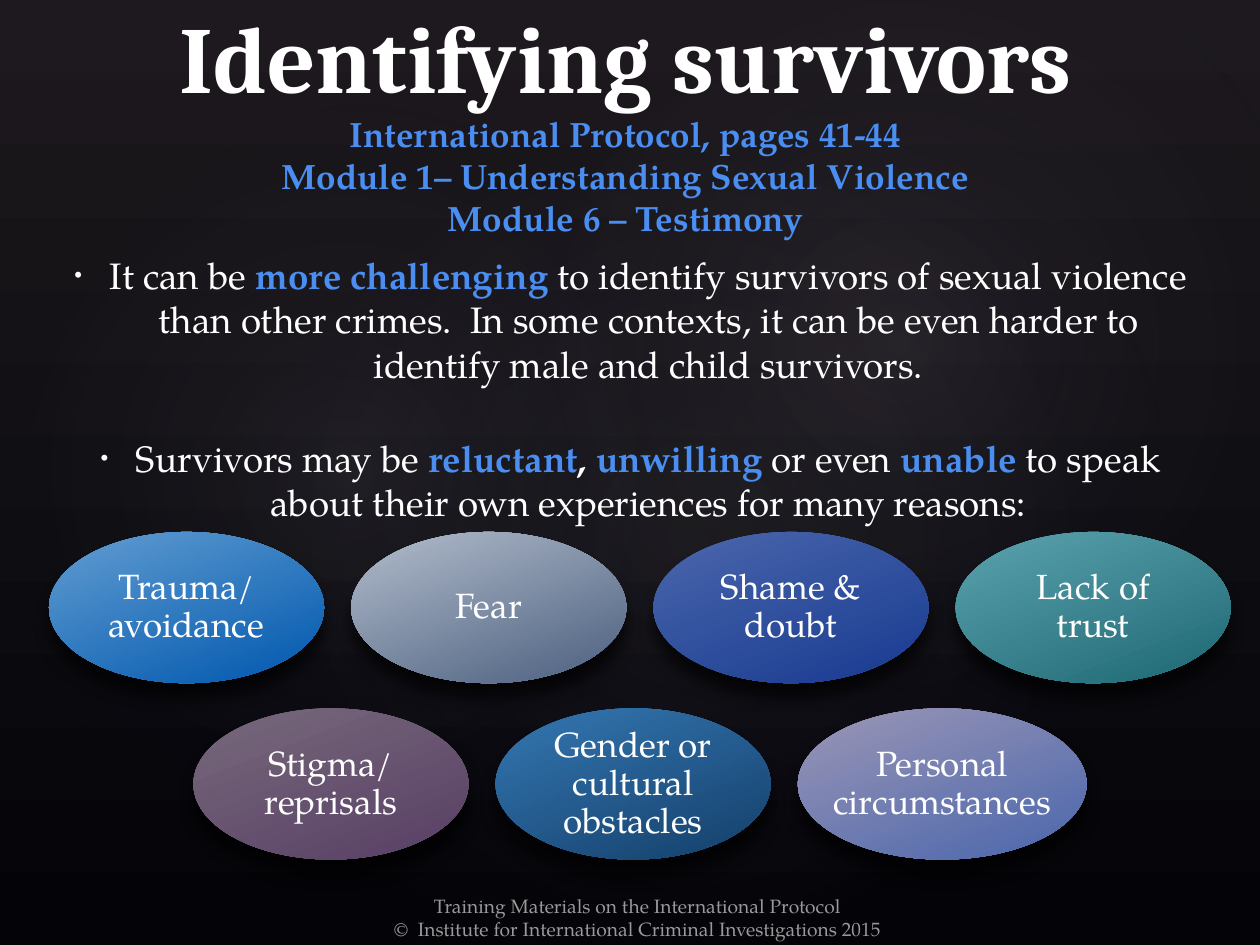
"""Build the slide on identifying survivors, with reasons for reluctance shown as ovals."""
from pptx import Presentation
from pptx.dml.color import RGBColor
from pptx.enum.shapes import MSO_SHAPE
from pptx.enum.text import MSO_ANCHOR, MSO_AUTO_SIZE, PP_ALIGN
from pptx.oxml import parse_xml
from pptx.oxml.ns import nsdecls, qn
from pptx.util import Pt

OVAL = MSO_SHAPE.OVAL
CENTER = PP_ALIGN.CENTER
MIDDLE, BOTTOM = MSO_ANCHOR.MIDDLE, MSO_ANCHOR.BOTTOM
NO_AUTOFIT = MSO_AUTO_SIZE.NONE
HEADING_FONT, TEXT_FONT = "Cambria", "TeX Gyre Pagella"
COLORS = {
    "text": "FFFFFF", "accent": "4A8EF2", "footer": "999999",
    "backdrop top": "1D191E", "backdrop bottom": "040408",
    "glow": "C4BCC6", "glow edge": "242852",
    "trauma": "629DD1", "trauma end": "0057AE",
    "fear": "B2BCCB", "fear end": "4B5F7F",
    "shame": "4A66AC", "shame end": "183A90",
    "trust": "5AA2AE", "trust end": "1E6874",
    "stigma": "78697B", "stigma end": "573F65",
    "gender": "3477B2", "gender end": "143F6A",
    "personal": "9B96B6", "personal end": "4A66AC",
}


def write(paragraph, text, size=20, font=TEXT_FONT, color="text", bold=False):
    paragraph.alignment = CENTER
    for number, line in enumerate(text.split("\n")):
        if number:
            paragraph.add_line_break()
        run = paragraph.add_run()
        run.text = line
        run.font.size = Pt(size)
        run.font.name = font
        run.font.bold = bold
        run.font.color.rgb = RGBColor.from_string(COLORS[color])


def fade(fill, start, end, angle):
    fill.gradient()
    fill.gradient_angle = angle
    for stop, color in zip(fill.gradient_stops, (start, end)):
        stop.color.rgb = RGBColor.from_string(COLORS[color])


deck = Presentation()
deck.slide_width, deck.slide_height = Pt(720), Pt(540)
slide = deck.slides.add_slide(deck.slide_layouts[1])
shapes = slide.shapes
fade(slide.background.fill, "backdrop top", "backdrop bottom", 270)

GLOWS = [
    (108, 82, 570, 449, 328.7, 7),
    (-21.6, 92, 436, 353, 294.3, 8),
    (257.8, 9.4, 510.5, 374.4, 328.7, 8),
]
for depth, (left, top, width, height, turn, opacity) in enumerate(GLOWS):
    glow = shapes.add_shape(OVAL, Pt(left), Pt(top), Pt(width), Pt(height))
    glow.rotation = turn
    glow.shadow.inherit = False
    glow.line.fill.background()
    glow.fill.background()
    properties = glow._element.spPr
    properties.replace(properties.find(qn("a:noFill")), parse_xml(
        f'<a:gradFill {nsdecls("a")}><a:gsLst>'
        f'<a:gs pos="0"><a:srgbClr val="{COLORS["glow"]}"><a:alpha val="{opacity * 1000}"/></a:srgbClr></a:gs>'
        f'<a:gs pos="58000"><a:srgbClr val="{COLORS["glow edge"]}"><a:alpha val="0"/></a:srgbClr></a:gs>'
        f'<a:gs pos="100000"><a:srgbClr val="{COLORS["glow edge"]}"><a:alpha val="0"/></a:srgbClr></a:gs>'
        '</a:gsLst><a:path path="circle"><a:fillToRect l="50000" t="50000" r="50000" b="50000"/></a:path>'
        '</a:gradFill>'))
    shapes._spTree.insert(2 + depth, glow._element)

heading = shapes.title
heading.left, heading.top, heading.width, heading.height = Pt(37), Pt(9.4), Pt(641), Pt(130.3)
heading_frame = heading.text_frame
heading_frame.auto_size = NO_AUTOFIT
heading_frame.vertical_anchor = BOTTOM
write(heading_frame.paragraphs[0], "Identifying survivors", size=54, font=HEADING_FONT, bold=True)
for reference in ("International Protocol, pages 41-44",
                  "Module 1– Understanding Sexual Violence",
                  "Module 6 – Testimony"):
    write(heading_frame.add_paragraph(), reference, color="accent", bold=True)

points = slide.placeholders[1]
points.left, points.top, points.width, points.height = Pt(25.2), Pt(145.4), Pt(669), Pt(153.4)
points_frame = points.text_frame
points_frame.auto_size = NO_AUTOFIT
points_frame.vertical_anchor = MIDDLE
PLAIN, STRONG = {}, {"color": "accent", "bold": True}
POINTS = [
    (0, [("It can be ", PLAIN), ("more challenging", STRONG),
         (" to identify survivors of sexual violence than other crimes.  In some contexts, "
          "it can be even harder to identify male and child survivors.", PLAIN)]),
    (29, [("Survivors may be ", PLAIN), ("reluctant", STRONG), (", ", {"bold": True}),
          ("unwilling ", STRONG), ("or even ", PLAIN), ("unable", STRONG),
          (" to speak about their own experiences for many reasons:", PLAIN)]),
]
for number, (gap, phrases) in enumerate(POINTS):
    point = points_frame.add_paragraph() if number else points_frame.paragraphs[0]
    for phrase, style in phrases:
        write(point, phrase, size=21, **style)
    point.space_before = Pt(gap)
    bullet_format = point._p.get_or_add_pPr()
    bullet_format.set("marL", str(Pt(21.6)))
    bullet_format.set("indent", str(Pt(-20.2)))
    bullet_format.append(parse_xml(f'<a:buSzPct {nsdecls("a")} val="60000"/>'))
    bullet_format.append(parse_xml(f'<a:buChar {nsdecls("a")} char="•"/>'))

footer = shapes.add_textbox(Pt(184.3), Pt(507.6), Pt(360), Pt(28.8))
footer_frame = footer.text_frame
footer_frame.word_wrap = True
write(footer_frame.paragraphs[0], "Training Materials on the International Protocol", size=11, color="footer")
write(footer_frame.add_paragraph(), "©  Institute for International Criminal Investigations 2015",
      size=11, color="footer")

REASON_WIDTH, REASON_HEIGHT, REASON_PITCH = 157.2, 86.4, 172.7
REASON_ROWS = [
    (28, 304, [("Trauma/\navoidance", "trauma", REASON_WIDTH), ("Fear", "fear", REASON_WIDTH),
               ("Shame &\ndoubt", "shame", REASON_WIDTH), ("Lack of\ntrust", "trust", REASON_WIDTH)]),
    (110.5, 404.8, [("Stigma/\nreprisals", "stigma", REASON_WIDTH),
                    ("Gender or\ncultural\nobstacles", "gender", REASON_WIDTH),
                    ("Personal\ncircumstances", "personal", 165)]),
]
for row_left, row_top, reasons in REASON_ROWS:
    for column, (label, color, width) in enumerate(reasons):
        reason = shapes.add_shape(OVAL, Pt(row_left + column * REASON_PITCH), Pt(row_top),
                                  Pt(width), Pt(REASON_HEIGHT))
        fade(reason.fill, color, f"{color} end", 291)
        reason.line.fill.background()
        reason.shadow.inherit = False
        reason._element.spPr.find(qn("a:effectLst")).append(parse_xml(
            f'<a:outerShdw {nsdecls("a")} blurRad="{Pt(9)}" dist="{Pt(9)}" dir="5400000" rotWithShape="0">'
            '<a:srgbClr val="000000"><a:alpha val="70000"/></a:srgbClr></a:outerShdw>'))
        reason_frame = reason.text_frame
        reason_frame.word_wrap = False
        reason_frame.vertical_anchor = MIDDLE
        reason_frame.margin_top = reason_frame.margin_bottom = 0
        reason_frame.paragraphs[0].line_spacing = 0.9
        write(reason_frame.paragraphs[0], label)

deck.save("out.pptx")
